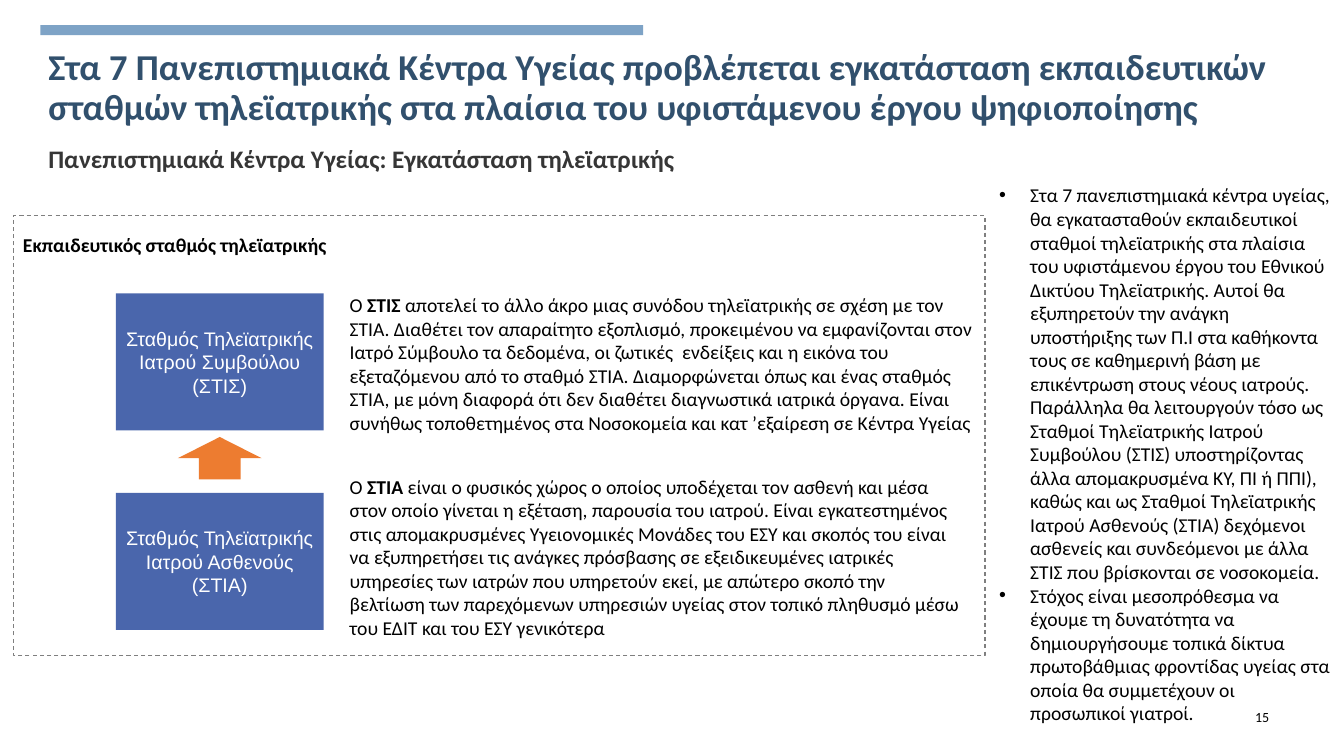
from lxml import etree
from pptx import Presentation
from pptx.dml.color import RGBColor
from pptx.enum import dml, shapes, text
from pptx.oxml.ns import qn
from pptx.util import Inches, Pt

BAR = RGBColor(0x7E, 0xA3, 0xC6)
TITLE = RGBColor(0x31, 0x50, 0x6D)
SUBTITLE = RGBColor(0x36, 0x36, 0x36)
STATION = RGBColor(0x4A, 0x66, 0xAC)
ARROW = RGBColor(0xED, 0x7C, 0x30)
FRAME = RGBColor(0x7F, 0x7F, 0x7F)
BLACK = RGBColor(0, 0, 0)
WHITE = RGBColor(0xFF, 0xFF, 0xFF)

STATION_LEFT, STATION_WIDTH, STATION_HEIGHT = 1.15, 2.06, 1.36
TEXT_LEFT = 3.37

# Each station: box top, label, text top, text width, short name, description
STATIONS = [
    (2.91, "Σταθμός Τηλεϊατρικής Ιατρού Συμβούλου (ΣΤΙΣ)", 2.86, 6.44, "ΣΤΙΣ",
     " αποτελεί το άλλο άκρο μιας συνόδου τηλεϊατρικής σε σχέση με τον ΣΤΙΑ. "
     "Διαθέτει τον απαραίτητο εξοπλισμό, προκειμένου να εμφανίζονται στον Ιατρό "
     "Σύμβουλο τα δεδομένα, οι ζωτικές  ενδείξεις και η εικόνα του εξεταζόμενου "
     "από το σταθμό ΣΤΙΑ. Διαμορφώνεται όπως και ένας σταθμός ΣΤΙΑ, με μόνη "
     "διαφορά ότι δεν διαθέτει διαγνωστικά ιατρικά όργανα. Είναι συνήθως "
     "τοποθετημένος στα Νοσοκομεία και κατ ’εξαίρεση σε Κέντρα Υγείας"),
    (4.89, "Σταθμός Τηλεϊατρικής Ιατρού Ασθενούς (ΣΤΙΑ)", 4.66, 6.25, "ΣΤΙΑ",
     " είναι ο φυσικός χώρος ο οποίος υποδέχεται τον ασθενή και μέσα στον οποίο "
     "γίνεται η εξέταση, παρουσία του ιατρού. Είναι εγκατεστημένος στις "
     "απομακρυσμένες Υγειονομικές Μονάδες του ΕΣΥ και σκοπός του είναι να "
     "εξυπηρετήσει τις ανάγκες πρόσβασης σε εξειδικευμένες ιατρικές υπηρεσίες "
     "των ιατρών που υπηρετούν εκεί, με απώτερο σκοπό την βελτίωση των "
     "παρεχόμενων υπηρεσιών υγείας στον τοπικό πληθυσμό μέσω του ΕΔΙΤ και του "
     "ΕΣΥ γενικότερα"),
]

BULLETS = [
    "Στα 7 πανεπιστημιακά κέντρα υγείας, θα εγκατασταθούν εκπαιδευτικοί σταθμοί "
    "τηλεϊατρικής στα πλαίσια του υφιστάμενου έργου του Εθνικού Δικτύου "
    "Τηλεϊατρικής. Αυτοί θα εξυπηρετούν την ανάγκη υποστήριξης των Π.Ι στα "
    "καθήκοντα τους σε καθημερινή βάση με επικέντρωση στους νέους ιατρούς. "
    "Παράλληλα θα λειτουργούν τόσο ως Σταθμοί Τηλεϊατρικής Ιατρού Συμβούλου "
    "(ΣΤΙΣ) υποστηρίζοντας άλλα απομακρυσμένα ΚΥ, ΠΙ ή ΠΠΙ), καθώς και ως "
    "Σταθμοί Τηλεϊατρικής Ιατρού Ασθενούς (ΣΤΙΑ) δεχόμενοι ασθενείς και "
    "συνδεόμενοι με άλλα ΣΤΙΣ που βρίσκονται σε νοσοκομεία.",
    "Στόχος είναι μεσοπρόθεσμα να έχουμε τη δυνατότητα να δημιουργήσουμε τοπικά "
    "δίκτυα πρωτοβάθμιας φροντίδας υγείας στα οποία θα συμμετέχουν οι προσωπικοί "
    "γιατροί.",
]


def format_font(font, size, color=BLACK, bold=False, name="Calibri"):
    font.name, font.size, font.bold = name, Pt(size), bold
    font.color.rgb = color


def set_frame(tf, anchor=text.MSO_ANCHOR.TOP, left=0.1, top=0.05):
    tf.word_wrap = True
    tf.auto_size = text.MSO_AUTO_SIZE.NONE
    tf.vertical_anchor = anchor
    tf.margin_left, tf.margin_right = Inches(left), Inches(0.1)
    tf.margin_top = tf.margin_bottom = Inches(top)


def add_text(slide, box, content, size, color=BLACK, bold=False, **frame):
    tf = slide.shapes.add_textbox(*map(Inches, box)).text_frame
    set_frame(tf, **frame)
    tf.text = content
    for r in tf.paragraphs[0].runs:
        format_font(r.font, size, color, bold)
    return tf


def add_block(slide, kind, box, fill=None):
    sp = slide.shapes.add_shape(kind, *map(Inches, box))
    sp.shadow.inherit = False
    sp.line.fill.background()
    if fill is None:
        sp.fill.background()
    else:
        sp.fill.solid()
        sp.fill.fore_color.rgb = fill
    return sp


def add_title(slide, content):
    sp = slide.shapes.title
    sp.left, sp.top, sp.width, sp.height = map(Inches, (0.36, 0.44, 12.4, 0.91))
    set_frame(sp.text_frame, left=0.12)
    sp.text_frame.text = content
    p = sp.text_frame.paragraphs[0]
    p.alignment = text.PP_ALIGN.LEFT
    p.line_spacing = 0.9
    format_font(p.runs[0].font, 26, TITLE, True)


def add_station(slide, top, label, text_top, text_width, short, description):
    sp = add_block(slide, shapes.MSO_SHAPE.RECTANGLE,
                   (STATION_LEFT, top, STATION_WIDTH, STATION_HEIGHT), STATION)
    set_frame(sp.text_frame, text.MSO_ANCHOR.MIDDLE)
    sp.text_frame.text = label
    p = sp.text_frame.paragraphs[0]
    p.alignment = text.PP_ALIGN.CENTER
    format_font(p.runs[0].font, 14, WHITE, name="Arial")

    tf = add_text(slide, (TEXT_LEFT, text_top, text_width, 1.6), "Ο ", 14)
    for part, bold in ((short, True), (description, False)):
        r = tf.paragraphs[0].add_run()
        r.text = part
        format_font(r.font, 14, bold=bold)


def add_bullets(slide, box, items):
    tf = slide.shapes.add_textbox(*map(Inches, box)).text_frame
    set_frame(tf)
    for i, item in enumerate(items):
        p = tf.add_paragraph() if i else tf.paragraphs[0]
        p.text = item
        pPr = p._p.get_or_add_pPr()
        pPr.set("marL", str(Inches(0.31)))
        pPr.set("indent", str(-Inches(0.31)))
        etree.SubElement(pPr, qn("a:buFont")).set("typeface", "Arial")
        etree.SubElement(pPr, qn("a:buChar")).set("char", "•")
        format_font(p.runs[0].font, 14)


def main():
    prs = Presentation()
    prs.slide_width, prs.slide_height = Inches(13.33), Inches(7.5)
    slide = prs.slides.add_slide(prs.slide_layouts[5])

    # Heading
    add_block(slide, shapes.MSO_SHAPE.RECTANGLE, (0.4, 0.25, 5.98, 0.1), BAR)
    add_title(slide, "Στα 7 Πανεπιστημιακά Κέντρα Υγείας προβλέπεται εγκατάσταση "
              "εκπαιδευτικών σταθμών τηλεϊατρικής στα πλαίσια του υφιστάμενου "
              "έργου ψηφιοποίησης")
    add_text(slide, (0.36, 1.37, 12.4, 0.4),
             "Πανεπιστημιακά Κέντρα Υγείας: Εγκατάσταση τηλεϊατρικής",
             18, SUBTITLE, True, anchor=text.MSO_ANCHOR.MIDDLE, left=0.12)

    # Training station panel
    frame = add_block(slide, shapes.MSO_SHAPE.RECTANGLE, (0.13, 2.14, 9.64, 4.36))
    frame.line.color.rgb = FRAME
    frame.line.width = Pt(0.75)
    frame.line.dash_style = dml.MSO_LINE.DASH
    add_text(slide, (0.13, 2.26, 4.84, 0.33), "Εκπαιδευτικός σταθμός τηλεϊατρικής",
             14, bold=True)
    for station in STATIONS:
        add_station(slide, *station)
    arrow = add_block(slide, shapes.MSO_SHAPE.RIGHT_ARROW,
                      (1.97, 4.13, 0.42, 0.83), ARROW)
    arrow.rotation = 270

    # Side notes and page number
    add_bullets(slide, (9.81, 1.77, 3.52, 5.46), BULLETS)
    add_text(slide, (12.35, 6.97, 0.57, 0.28), "15", 10,
             anchor=text.MSO_ANCHOR.MIDDLE, top=0.1)

    prs.save("out.pptx")


if __name__ == "__main__":
    main()
